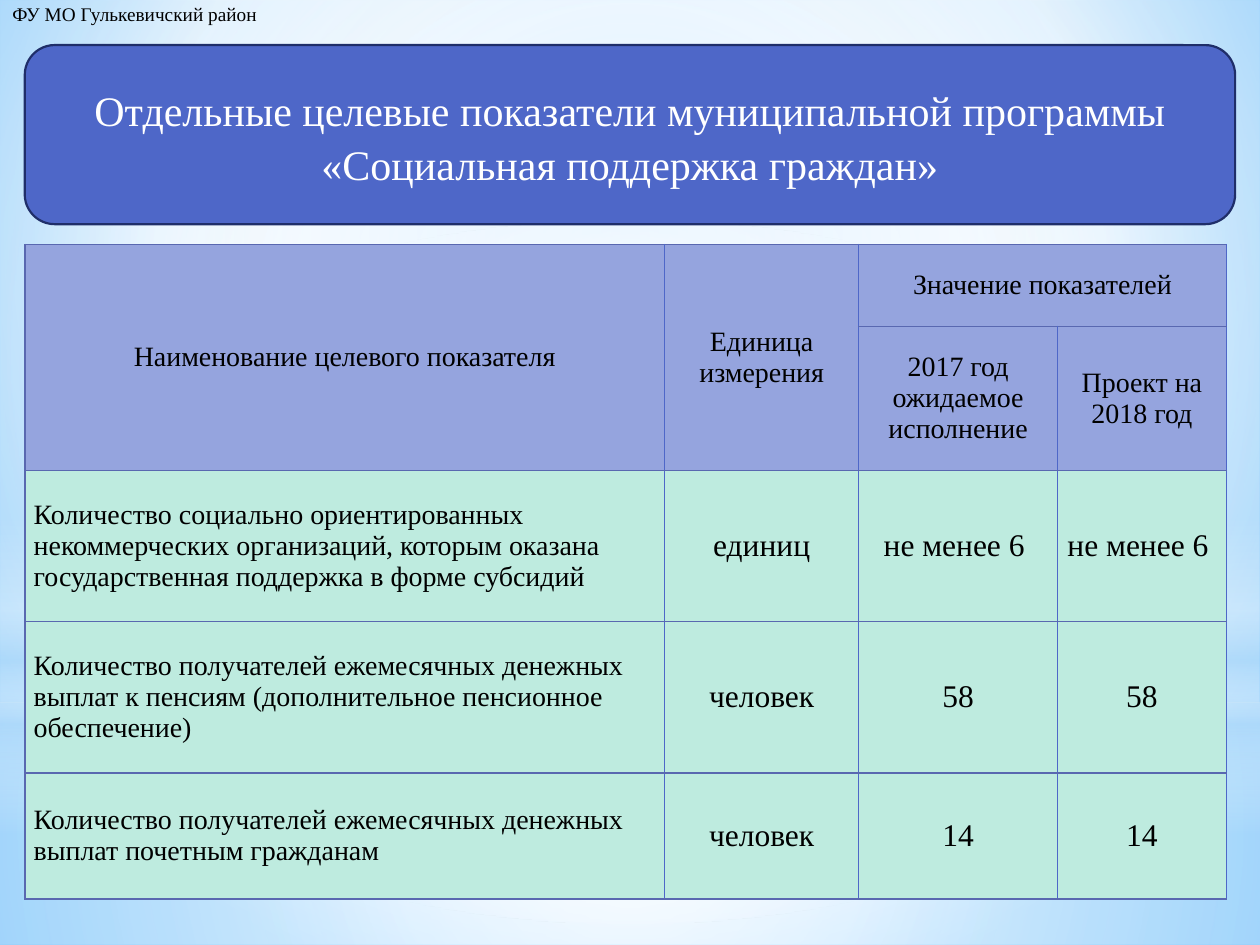
from lxml.etree import SubElement
from pptx import Presentation
from pptx.dml.color import RGBColor
from pptx.enum.shapes import MSO_SHAPE as Preset
from pptx.enum.text import MSO_ANCHOR as Anchor, MSO_AUTO_SIZE as AutoSize, PP_ALIGN as Align
from pptx.oxml import parse_xml
from pptx.oxml.ns import nsdecls, qn
from pptx.util import Cm, Pt

FONT = "Times New Roman"
COLUMN_WIDTHS = [12.9, 3.91, 4.01, 3.4]
ROW_HEIGHTS = [1.65, 2.9, 3.05, 3.05, 2.54]
HEADERS = [
    (0, 0, 1, 0, "Наименование целевого показателя"),
    (0, 1, 1, 1, "Единица\nизмерения"),
    (0, 2, 0, 3, "Значение показателей"),
    (1, 2, 1, 2, "2017 год ожидаемое исполнение"),
    (1, 3, 1, 3, "Проект на 2018 год"),
]
INDICATORS = [
    ("Количество социально ориентированных некоммерческих организаций, которым оказана\n"
     "государственная поддержка в форме субсидий", "единиц", "не менее 6 ", "не менее 6 "),
    ("Количество получателей ежемесячных денежных выплат к пенсиям "
     "(дополнительное пенсионное обеспечение)", "человек", "58", "58"),
    ("Количество получателей ежемесячных денежных выплат почетным гражданам",
     "человек", "14", "14"),
]


def color(value):
    return RGBColor.from_string(value)


def write(frame, text, size=16, ink="000000", align=Align.CENTER, spacing=None):
    for index, line in enumerate(text.split("\n")):
        paragraph = frame.add_paragraph() if index else frame.paragraphs[0]
        paragraph.alignment = align
        paragraph.line_spacing = spacing
        run = paragraph.add_run()
        run.text = line
        run.font.name, run.font.size = FONT, Pt(size)
        run.font.color.rgb = color(ink)


def apply_gradient(holder, stops, focus=None):
    gradient = parse_xml(f'<a:gradFill {nsdecls("a")} rotWithShape="1"/>')
    stop_list = SubElement(gradient, qn("a:gsLst"))
    for position, tint, opacity in stops:
        stop = SubElement(stop_list, qn("a:gs"), pos=str(position * 1000))
        tone = SubElement(stop, qn("a:srgbClr"), val=tint)
        if opacity < 100:
            SubElement(tone, qn("a:alpha"), val=str(opacity * 1000))
    if focus:
        circle = SubElement(gradient, qn("a:path"), path="circle")
        edges = {side: str(part * 1000) for side, part in zip("ltrb", focus)}
        SubElement(circle, qn("a:fillToRect"), **edges)
    else:
        SubElement(gradient, qn("a:lin"), ang="5400000", scaled="0")
    holder.replace(holder.find(qn("a:solidFill")), gradient)


def add_panel(slide, preset, left, top, width, height, fill="FFFFFF", outline=None):
    panel = slide.shapes.add_shape(preset, Cm(left), Cm(top), Cm(width), Cm(height))
    panel.shadow.inherit = False
    panel.fill.solid()
    panel.fill.fore_color.rgb = color(fill)
    if outline:
        panel.line.color.rgb = color(outline)
        panel.line.width = Pt(1.25)
    else:
        panel.line.fill.background()
    return panel


def add_glow(slide, preset, top, height, stops, focus=None):
    glow = add_panel(slide, preset, 0, top, 25.4, height)
    apply_gradient(glow._element.spPr, stops, focus)


def paint_backdrop(slide):
    slide.background.fill.solid()
    apply_gradient(slide._element.find(".//" + qn("p:bgPr")),
                   [(0, "9ED5FF", 100), (60, "FFFFFF", 100), (100, "5BB9FF", 100)],
                   (20, 10, 20, 60))
    white, sky, center = "FFFFFF", "B4DCFA", (50, 50, 50, 50)
    add_glow(slide, Preset.RECTANGLE, 14.17, 4.88,
             [(0, white, 91), (37, white, 76), (100, sky, 79)], center)
    add_glow(slide, Preset.RECTANGLE, 0, 14.17,
             [(0, white, 89), (48, white, 62), (100, sky, 79)], center)
    add_glow(slide, Preset.RECTANGLE, 10.46, 6.35,
             [(0, white, 0), (29, white, 30), (45, sky, 40),
              (55, white, 26), (65, sky, 60), (100, white, 0)])
    add_glow(slide, Preset.OVAL, 4.45, 14.17, [(0, white, 100), (56, white, 0)], center)


def add_department(slide):
    label = slide.shapes.add_textbox(Cm(0), Cm(-0.08), Cm(5.54), Cm(0.74))
    label.text_frame.word_wrap = False
    label.text_frame.auto_size = AutoSize.SHAPE_TO_FIT_TEXT
    write(label.text_frame, "ФУ МО Гулькевичский район", size=11, align=Align.LEFT)


def add_title(slide):
    title = add_panel(slide, Preset.ROUNDED_RECTANGLE, 0.5, 0.91, 24.4, 3.61,
                      fill="4E67C8", outline="1F2E69")
    title.text_frame.word_wrap = True
    title.text_frame.vertical_anchor = Anchor.MIDDLE
    write(title.text_frame,
          "Отдельные целевые показатели муниципальной программы «Социальная поддержка граждан»",
          size=24, ink="FFFFFF", spacing=1.07)


def style_cell(cell, fill, first_column):
    cell.vertical_anchor = Anchor.MIDDLE
    cell.fill.solid()
    cell.fill.fore_color.rgb = color(fill)
    sides = {"L": "5968B0" if first_column else "4E67C8",
             "R": "4E67C8", "T": "5968B0", "B": "5968B0"}
    for index, (side, tint) in enumerate(sides.items()):
        border = parse_xml(f'<a:ln{side} {nsdecls("a")} w="12700"><a:solidFill>'
                           f'<a:srgbClr val="{tint}"/></a:solidFill></a:ln{side}>')
        cell._tc.get_or_add_tcPr().insert(index, border)


def add_indicators(slide):
    table = slide.shapes.add_table(len(ROW_HEIGHTS), len(COLUMN_WIDTHS), Cm(0.5), Cm(4.93),
                                   Cm(sum(COLUMN_WIDTHS)), Cm(sum(ROW_HEIGHTS))).table
    for column, width in zip(table.columns, COLUMN_WIDTHS):
        column.width = Cm(width)
    for row, height in zip(table.rows, ROW_HEIGHTS):
        row.height = Cm(height)
    for row in range(len(ROW_HEIGHTS)):
        for column in range(len(COLUMN_WIDTHS)):
            style_cell(table.cell(row, column), "95A4DE" if row < 2 else "BEEBDF", column == 0)
    for top, left, bottom, right, heading in HEADERS:
        cell = table.cell(top, left)
        if (top, left) != (bottom, right):
            cell.merge(table.cell(bottom, right))
        write(cell.text_frame, heading)
    for row, indicator in enumerate(INDICATORS, start=2):
        for column, text in enumerate(indicator):
            cell = table.cell(row, column)
            cell.margin_left = cell.margin_right = Cm(0.18)
            cell.margin_top = cell.margin_bottom = Cm(0)
            write(cell.text_frame, text, size=18 if column else 16,
                  align=Align.CENTER if column else Align.LEFT)


def main():
    deck = Presentation()
    deck.slide_width, deck.slide_height = Cm(25.4), Cm(19.05)
    slide = deck.slides.add_slide(deck.slide_layouts[6])
    paint_backdrop(slide)
    add_department(slide)
    add_indicators(slide)
    add_title(slide)
    deck.save("out.pptx")


if __name__ == "__main__":
    main()
